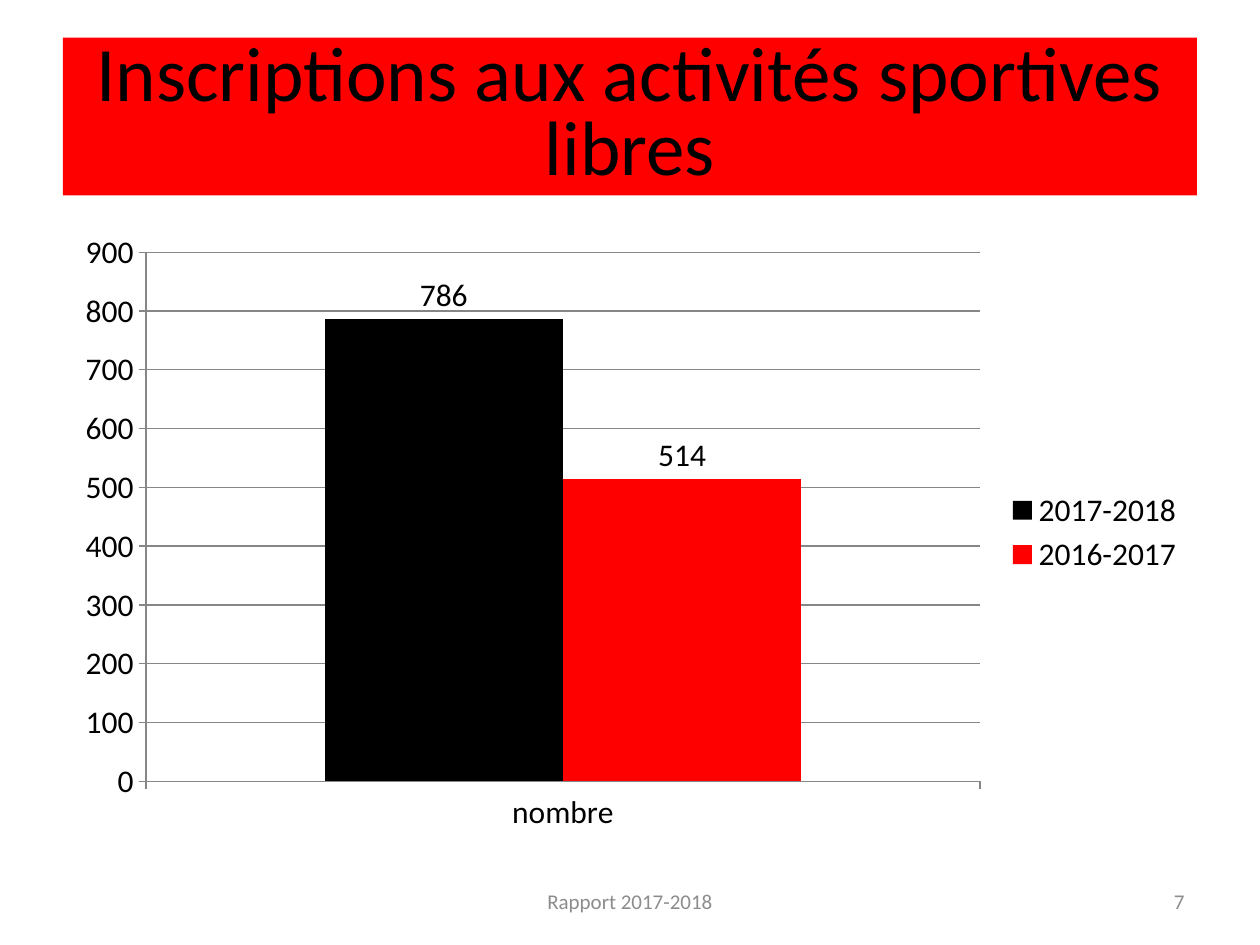
"""Build the slide on registrations for free sports activities."""
from dataclasses import dataclass

from pptx import Presentation
from pptx.chart.data import CategoryChartData
from pptx.dml.color import RGBColor
from pptx.enum.chart import XL_CHART_TYPE, XL_LABEL_POSITION, XL_LEGEND_POSITION, XL_TICK_MARK
from pptx.enum.shapes import MSO_SHAPE
from pptx.enum.text import MSO_ANCHOR, PP_ALIGN
from pptx.util import Cm, Pt

TITLE = "Inscriptions aux activités sportives libres"
CATEGORIES = ["nombre"]
SERIES = [("2017-2018", 786, "black"), ("2016-2017", 514, "red")]
FOOTERS = [
    ("Rapport 2017-2018", 8.68, 8.04, PP_ALIGN.CENTER),
    ("7", 18.2, 5.93, PP_ALIGN.RIGHT),
]
SLIDE_WIDTH, SLIDE_HEIGHT, MARGIN = 25.4, 19.05, 1.27
CONTENT_WIDTH = SLIDE_WIDTH - 2 * MARGIN


@dataclass(frozen=True)
class Theme:
    """Hold the colours, font and type sizes."""
    font: str = "Calibri"
    black: RGBColor = RGBColor(0, 0, 0)
    red: RGBColor = RGBColor(255, 0, 0)
    footer: RGBColor = RGBColor(140, 140, 140)
    line: RGBColor = RGBColor(134, 134, 134)
    title_size: int = 44
    title_spacing: float = 0.8
    chart_size: int = 18
    footer_size: int = 12


THEME = Theme()


def style_font(font, size, color):
    """Apply the theme font with a size and a colour."""
    font.name = THEME.font
    font.size = Pt(size)
    font.color.rgb = color


def write_text(shape, text, size, color, alignment):
    """Write one vertically centred paragraph in a shape and return it."""
    frame = shape.text_frame
    frame.word_wrap = True
    frame.vertical_anchor = MSO_ANCHOR.MIDDLE
    paragraph = frame.paragraphs[0]
    paragraph.text = text
    paragraph.alignment = alignment
    style_font(paragraph.font, size, color)
    return paragraph


def add_title(slide):
    """Add the red title band with both lines inside it."""
    shape = slide.shapes.add_shape(
        MSO_SHAPE.RECTANGLE, Cm(MARGIN), Cm(0.76), Cm(CONTENT_WIDTH), Cm(3.18))
    shape.shadow.inherit = False
    shape.fill.solid()
    shape.fill.fore_color.rgb = THEME.red
    shape.line.fill.background()
    shape.text_frame.margin_top = shape.text_frame.margin_bottom = Cm(0)
    paragraph = write_text(shape, TITLE, THEME.title_size, THEME.black, PP_ALIGN.CENTER)
    paragraph.line_spacing = THEME.title_spacing


def add_registrations_chart(slide):
    """Add the column chart comparing both school years."""
    data = CategoryChartData()
    data.categories = CATEGORIES
    for name, value, _ in SERIES:
        data.add_series(name, [value])
    chart = slide.shapes.add_chart(
        XL_CHART_TYPE.COLUMN_CLUSTERED, Cm(MARGIN), Cm(4.45),
        Cm(CONTENT_WIDTH), Cm(12.57), data).chart
    style_font(chart.font, THEME.chart_size, THEME.black)
    chart.has_title = False
    chart.has_legend = True
    chart.legend.position = XL_LEGEND_POSITION.RIGHT
    chart.legend.include_in_layout = False

    for axis in (chart.category_axis, chart.value_axis):
        axis.major_tick_mark = XL_TICK_MARK.OUTSIDE
        axis.minor_tick_mark = XL_TICK_MARK.NONE
        axis.format.line.color.rgb = THEME.line
    chart.value_axis.has_major_gridlines = True
    chart.value_axis.major_gridlines.format.line.color.rgb = THEME.line

    plot = chart.plots[0]
    plot.gap_width = 150
    plot.vary_by_categories = False
    for series, (_, _, color) in zip(plot.series, SERIES):
        series.format.fill.solid()
        series.format.fill.fore_color.rgb = getattr(THEME, color)
        labels = series.data_labels
        labels.show_value = True
        labels.position = XL_LABEL_POSITION.OUTSIDE_END


def add_footers(slide):
    """Add the report name and the page number."""
    for text, left, width, alignment in FOOTERS:
        box = slide.shapes.add_textbox(Cm(left), Cm(17.66), Cm(width), Cm(1.01))
        write_text(box, text, THEME.footer_size, THEME.footer, alignment)


def main():
    """Build and save the presentation."""
    presentation = Presentation()
    presentation.slide_width = Cm(SLIDE_WIDTH)
    presentation.slide_height = Cm(SLIDE_HEIGHT)
    slide = presentation.slides.add_slide(presentation.slide_layouts[6])
    add_title(slide)
    add_registrations_chart(slide)
    add_footers(slide)
    presentation.save("out.pptx")


if __name__ == "__main__":
    main()
